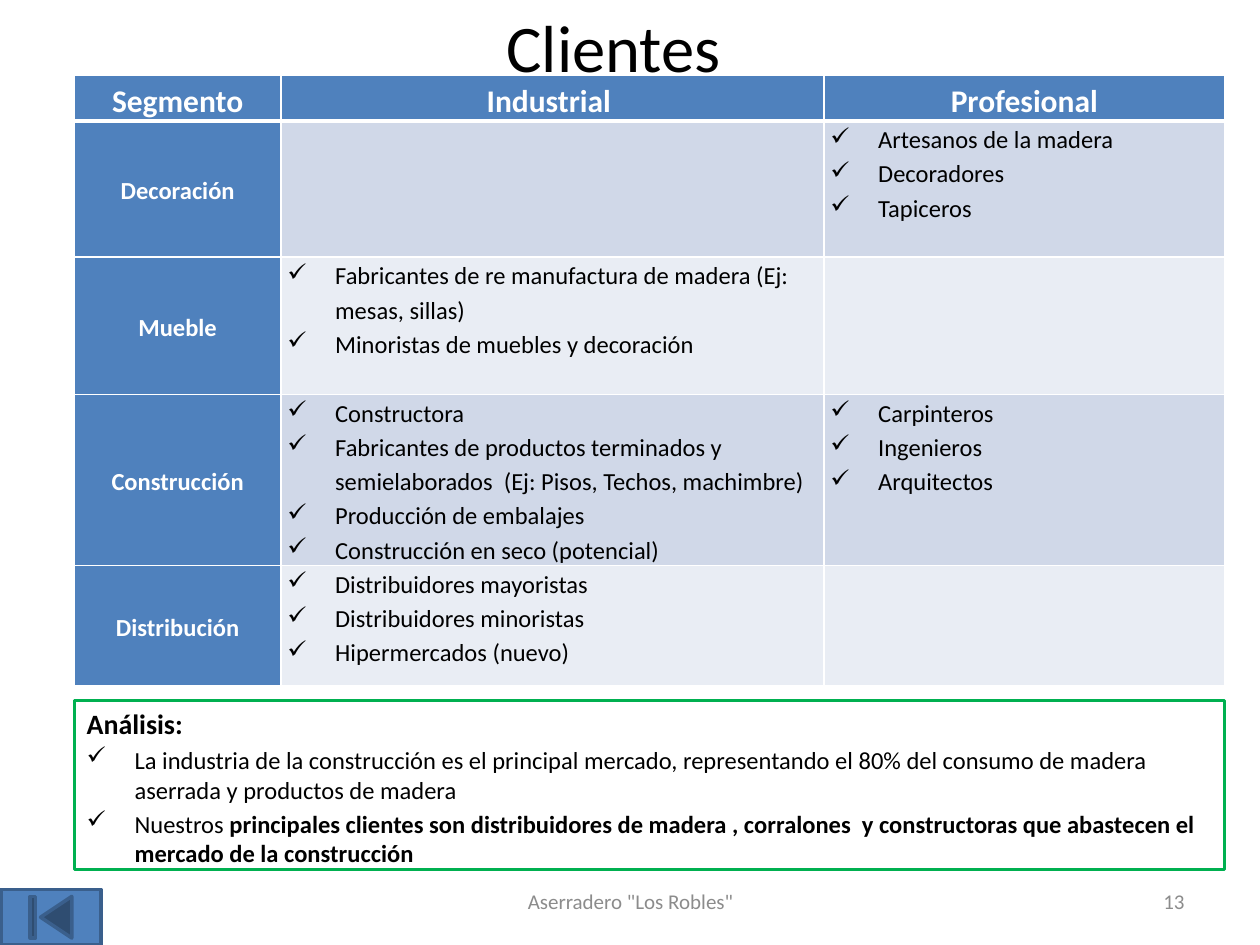
from dataclasses import dataclass

from lxml import etree
from pptx import Presentation
from pptx.dml.color import RGBColor
from pptx.enum.shapes import MSO_SHAPE
from pptx.enum.text import MSO_ANCHOR, PP_ALIGN
from pptx.oxml.ns import qn
from pptx.util import Inches, Pt

LEFT, CENTER, RIGHT = PP_ALIGN.LEFT, PP_ALIGN.CENTER, PP_ALIGN.RIGHT
TOP, MIDDLE, BOTTOM = MSO_ANCHOR.TOP, MSO_ANCHOR.MIDDLE, MSO_ANCHOR.BOTTOM
BOX = MSO_SHAPE.RECTANGLE
BUTTON = MSO_SHAPE.ACTION_BUTTON_BEGINNING


@dataclass(frozen=True)
class Theme:
    font: str = "Calibri"
    blue: str = "4F81BD"
    edge: str = "3A5F8C"
    green: str = "00B050"
    bands: tuple = ("D0D8E8", "E9EDF4")
    black: str = "000000"
    white: str = "FFFFFF"
    gray: str = "8C8C8C"
    title: int = 38
    head: int = 18
    lead: int = 16
    body: int = 14
    foot: int = 12


T = Theme()
X, W = 0.59, 9.13  # shared by table and analysis box
COLS = (1.64, 4.31, 3.18)
ROWS = (0.36, 1.08, 1.09, 1.36, 0.95)
HEADS = ("Segmento", "Industrial ", "Profesional")
DATA = (
    ("Decoración", (),
     ("Artesanos de la madera", "Decoradores", "Tapiceros")),
    ("Mueble",
     ("Fabricantes de re manufactura de madera (Ej: mesas, sillas)",
      "Minoristas de muebles y decoración"), ()),
    ("Construcción",
     ("Constructora",
      "Fabricantes de productos terminados y semielaborados  "
      "(Ej: Pisos, Techos, machimbre)",
      "Producción de embalajes", "Construcción en seco (potencial)"),
     ("Carpinteros", "Ingenieros", "Arquitectos")),
    ("Distribución",
     ("Distribuidores mayoristas", "Distribuidores minoristas",
      "Hipermercados (nuevo)"), ()),
)
NOTES = (
    (("La industria de la construcción es el principal mercado, "
      "representando el 80% del consumo de madera aserrada y productos "
      "de madera", False),),
    (("Nuestros ", False),
     ("principales clientes son distribuidores de madera , corralones  y "
      "constructoras que abastecen el mercado de la construcción", True)),
)


def rgb(color):
    return RGBColor.from_string(color)


def style(run, size, color, bold=False):
    font = run.font
    font.name, font.size, font.bold = T.font, Pt(size), bold
    font.color.rgb = rgb(color)


def write(para, parts, size, color, align=LEFT):
    """Fill a paragraph with (text, bold) parts."""
    para.alignment = align
    for text, bold in parts:
        run = para.add_run()
        run.text = text
        style(run, size, color, bold)


def check(para):
    """Give a paragraph a hanging check mark."""
    props = para._p.get_or_add_pPr()
    props.set("marL", str(Inches(0.38)))
    props.set("indent", str(-Inches(0.38)))
    etree.SubElement(props, qn("a:buChar"), char="✓")


def place(shape, x, y, w, h):
    shape.left, shape.top = Inches(x), Inches(y)
    shape.width, shape.height = Inches(w), Inches(h)


def border(cell, head):
    props = cell._tc.get_or_add_tcPr()
    for side in "LRTB":
        width = 3 if head and side == "B" else 1
        line = etree.SubElement(props, qn(f"a:ln{side}"), w=str(Pt(width)))
        fill = etree.SubElement(line, qn("a:solidFill"))
        etree.SubElement(fill, qn("a:srgbClr"), val=T.white)


def paint(cell, color, anchor, head=False):
    border(cell, head)
    cell.fill.solid()
    cell.fill.fore_color.rgb = rgb(color)
    cell.vertical_anchor = anchor
    cell.margin_left = cell.margin_right = Inches(0.05)
    cell.margin_top = cell.margin_bottom = 0


def label(cell, text, size):
    para = cell.text_frame.paragraphs[0]
    para.line_spacing = 1.15
    write(para, [(text, True)], size, T.white, CENTER)


def items(cell, texts):
    frame = cell.text_frame
    for i, text in enumerate(texts):
        para = frame.add_paragraph() if i else frame.paragraphs[0]
        para.line_spacing = 1.15
        check(para)
        write(para, [(text, False)], T.body, T.black)


def grid(slide):
    frame = slide.shapes.add_table(
        len(ROWS), len(COLS), Inches(X), Inches(0.6),
        Inches(W), Inches(sum(ROWS)))
    table = frame.table
    for col, width in zip(table.columns, COLS):
        col.width = Inches(width)
    for row, height in zip(table.rows, ROWS):
        row.height = Inches(height)
    for c, text in enumerate(HEADS):
        paint(table.cell(0, c), T.blue, BOTTOM, True)
        label(table.cell(0, c), text, T.head)
    for r, (name, *lists) in enumerate(DATA, 1):
        paint(table.cell(r, 0), T.blue, MIDDLE)
        label(table.cell(r, 0), name, T.body)
        for c, texts in enumerate(lists, 1):
            paint(table.cell(r, c), T.bands[(r - 1) % 2], TOP)
            items(table.cell(r, c), texts)


def panel(slide):
    box = slide.shapes.add_shape(BOX, 0, 0, 0, 0)
    place(box, X, 5.56, W, 1.34)
    box.shadow.inherit = False
    box.fill.background()
    box.line.color.rgb, box.line.width = rgb(T.green), Pt(1.5)
    frame = box.text_frame
    frame.word_wrap, frame.vertical_anchor = True, TOP
    write(frame.paragraphs[0], [("Análisis:", True)], T.lead, T.black)
    for parts in NOTES:
        para = frame.add_paragraph()
        para.space_before = Pt(2.8)
        check(para)
        write(para, parts, T.body, T.black)


def footer(slide, text, x, w, align):
    box = slide.shapes.add_textbox(0, 0, 0, 0)
    place(box, x, 6.95, w, 0.4)
    frame = box.text_frame
    frame.word_wrap, frame.vertical_anchor = True, MIDDLE
    write(frame.paragraphs[0], [(text, False)], T.foot, T.gray, align)


def button(slide):
    shape = slide.shapes.add_shape(BUTTON, 0, 0, 0, 0)
    place(shape, 0.01, 7.06, 0.79, 0.44)
    shape.shadow.inherit = False
    shape.fill.solid()
    shape.fill.fore_color.rgb = rgb(T.blue)
    shape.line.color.rgb, shape.line.width = rgb(T.edge), Pt(2)


def main():
    deck = Presentation()
    deck.slide_width, deck.slide_height = Inches(10), Inches(7.5)
    slide = deck.slides.add_slide(deck.slide_layouts[5])

    # Title
    title = slide.shapes.title
    place(title, 0.43, 0.02, 9, 0.69)
    title.text_frame.vertical_anchor = MIDDLE
    write(title.text_frame.paragraphs[0], [("Clientes ", False)],
          T.title, T.black, CENTER)

    # Analysis, footer and client table
    panel(slide)
    footer(slide, 'Aserradero "Los Robles"', 3.42, 3.17, CENTER)
    footer(slide, "13", 7.17, 2.33, RIGHT)
    grid(slide)

    # Navigation
    button(slide)
    deck.save("out.pptx")


if __name__ == "__main__":
    main()
